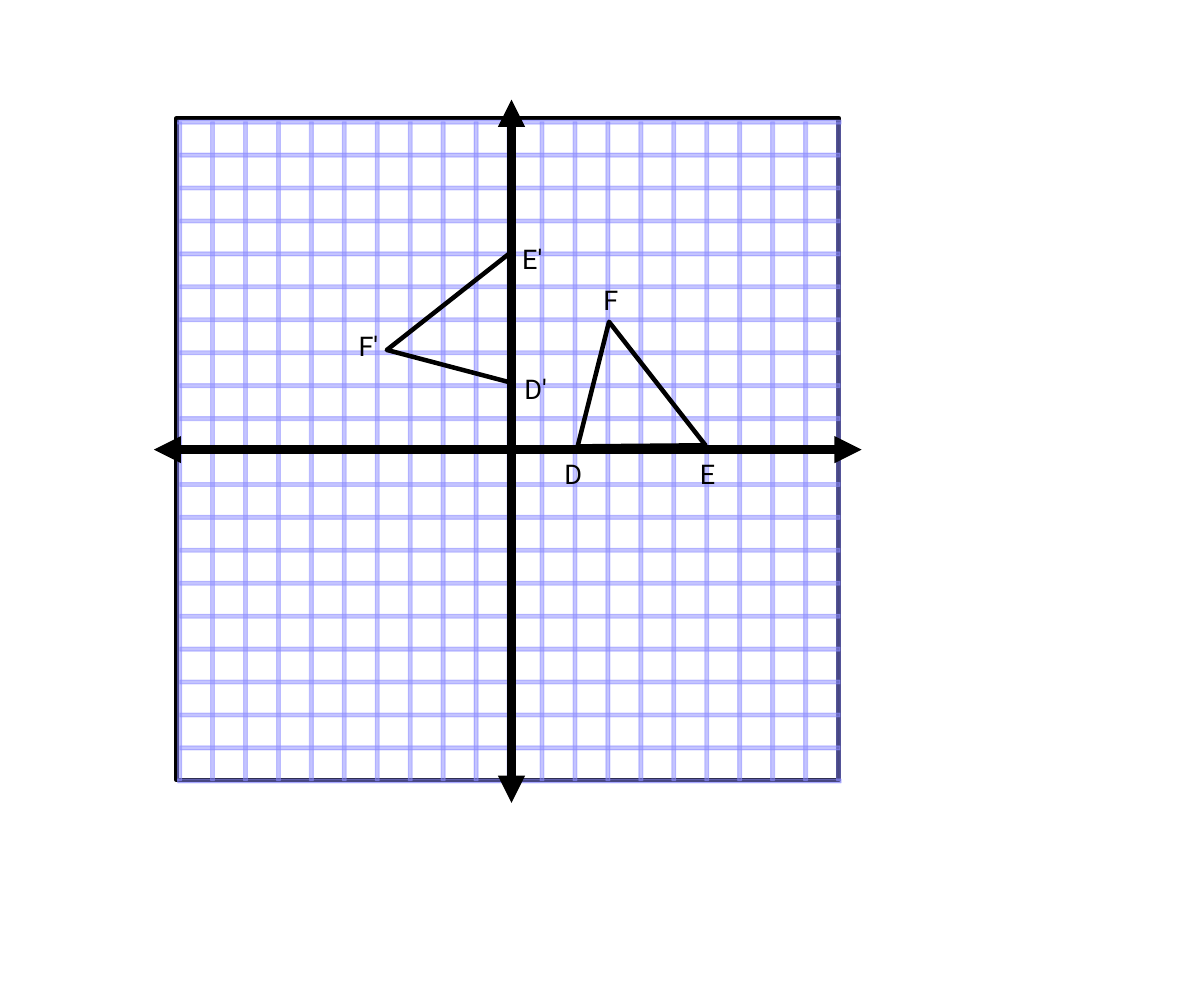
"""Coordinate grid with triangle DEF and its quarter-turn image D'E'F'."""
import pptx
import pptx.util
import pptx.dml.color
import pptx.enum.shapes
import pptx.oxml
import pptx.oxml.ns
import lxml.etree

Inches = pptx.util.Inches
Pt = pptx.util.Pt
BLACK = pptx.dml.color.RGBColor(0x00, 0x00, 0x00)
WHITE = pptx.dml.color.RGBColor(0xFF, 0xFF, 0xFF)
BLUE = pptx.dml.color.RGBColor(0x8C, 0x8C, 0xFF)
RECT = pptx.enum.shapes.MSO_SHAPE.RECTANGLE
qn = pptx.oxml.ns.qn

deck = pptx.Presentation()
deck.slide_width = Inches(11.11)
deck.slide_height = Inches(9.11)
slide = deck.slides.add_slide(deck.slide_layouts[6])
shapes = slide.shapes


def label(text, left, top, width, height=0.4, size=18, font="Roboto", color=BLACK):
    box = shapes.add_textbox(Inches(left), Inches(top), Inches(width), Inches(height))
    frame = box.text_frame
    frame.word_wrap = True
    frame.margin_right = 0
    run = frame.paragraphs[0].add_run()
    run.text = text
    run.font.size = Pt(size)
    run.font.name = font
    run.font.color.rgb = color


board = shapes.add_shape(RECT, Inches(1.63), Inches(1.09), Inches(6.11), Inches(6.11))
board.shadow.inherit = False
board.fill.solid()
board.fill.fore_color.rgb = WHITE
board.line.color.rgb = BLACK
board.line.width = Pt(3)

STEP = 0.304
BAR = 0.035
bars = []
for i in range(21):
    bars.append((1.64 + i * STEP, 1.125, BAR, 6.08))
    edge = i in (0, 20)
    bars.append((1.64 if edge else 1.66, 1.11 + i * STEP, 6.12 if edge else 6.09, BAR))

for bar in bars:
    shape = shapes.add_shape(RECT, *[Inches(n) for n in bar])
    shape.shadow.inherit = False
    shape.fill.solid()
    shape.fill.fore_color.rgb = BLUE
    shape.line.color.rgb = BLUE
    shape.line.width = Pt(0)
    for tint in shape.element.spPr.iter(qn("a:srgbClr")):
        lxml.etree.SubElement(tint, qn("a:alpha"), val="51000")

for ends in [(4.72, 7.41, 4.72, 0.92), (1.42, 4.15, 7.95, 4.15)]:
    axis = shapes.add_connector(
        pptx.enum.shapes.MSO_CONNECTOR.STRAIGHT, *[Inches(n) for n in ends])
    axis.line.color.rgb = BLACK
    axis.line.width = Pt(6)
    props = axis.element.spPr
    for tag in ("a:headEnd", "a:tailEnd"):
        lxml.etree.SubElement(props.find(qn("a:ln")), qn(tag), type="triangle")
    lxml.etree.SubElement(props, qn("a:effectLst"))

for points in [
    [(5.62, 2.97), (6.51, 4.11), (5.33, 4.12)],
    [(3.57, 3.23), (4.70, 2.34), (4.71, 3.53)],
]:
    first, *rest = [(Inches(x), Inches(y)) for x, y in points]
    path = shapes.build_freeform(*first)
    path.add_line_segments(rest, close=True)
    angle = path.convert_to_shape()
    angle.shadow.inherit = False
    angle.fill.background()
    angle.line.color.rgb = BLACK
    angle.line.width = Pt(3)

for text, left, top, width in [
    ("D", 5.11, 4.17, 0.39),
    ("E", 6.36, 4.17, 0.37),
    ("F", 5.47, 2.57, 0.35),
    ("D'", 4.74, 3.39, 0.45),
    ("E'", 4.72, 2.19, 0.43),
    ("F'", 3.21, 2.99, 0.41),
]:
    label(text, left, top, width)

deck.save("out.pptx")
